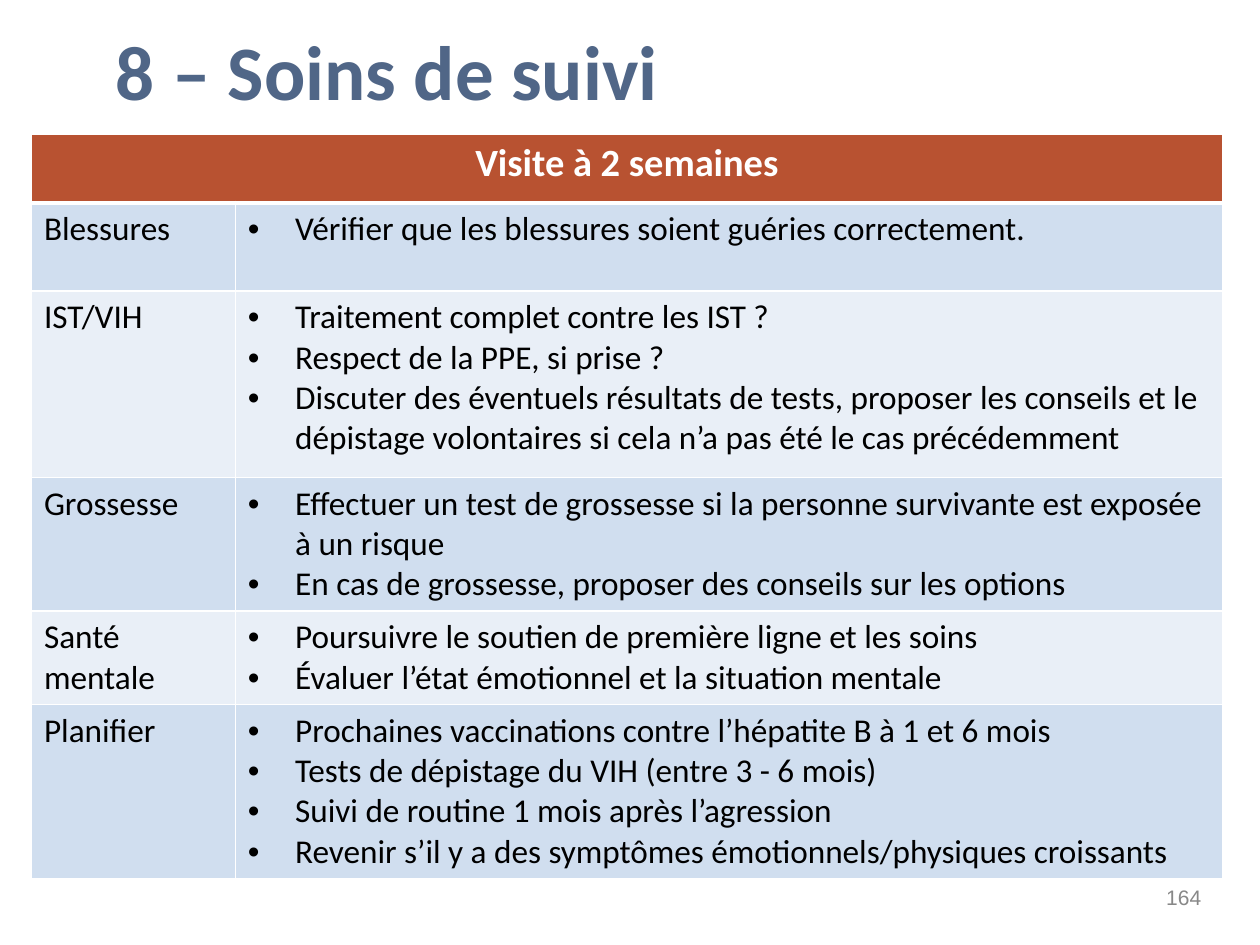
import pptx
import pptx.util
import pptx.dml.color
import pptx.enum.text
import pptx.oxml.ns
import lxml.etree

Pt = pptx.util.Pt
ALIGN = pptx.enum.text.PP_ALIGN
ANCHOR = pptx.enum.text.MSO_ANCHOR
WHITE, BLACK = "FFFFFF", "000000"
HEADER_FILL = "B85231"
BAND_FILLS = ["D0DEEF", "E9EFF7"]
COLUMN_WIDTHS = [116.5, 564]
ROW_HEIGHTS = [39.5, 50.3, 106.5, 75.7, 52.8, 98]
HEADING = "Visite à 2 semaines"
CARE_TOPICS = [
    ("Blessures", ["Vérifier que les blessures soient guéries correctement."]),
    ("IST/VIH", [
        "Traitement complet contre les IST ?",
        "Respect de la PPE, si prise ?",
        "Discuter des éventuels résultats de tests, proposer les conseils et le "
        "dépistage volontaires si cela n’a pas été le cas précédemment",
    ]),
    ("Grossesse", [
        "Effectuer un test de grossesse si la personne survivante est exposée à un risque",
        "En cas de grossesse, proposer des conseils sur les options",
    ]),
    ("Santé mentale", [
        "Poursuivre le soutien de première ligne et les soins",
        "Évaluer l’état émotionnel et la situation mentale",
    ]),
    ("Planifier", [
        "Prochaines vaccinations contre l’hépatite B à 1 et 6 mois",
        "Tests de dépistage du VIH (entre 3 - 6 mois)",
        "Suivi de routine 1 mois après l’agression",
        "Revenir s’il y a des symptômes émotionnels/physiques croissants",
    ]),
]


def rgb(color):
    """Return the colour for a hex string."""
    return pptx.dml.color.RGBColor.from_string(color)


def add_element(parent, tag, **attributes):
    """Append a DrawingML element and return it."""
    element = lxml.etree.SubElement(parent, pptx.oxml.ns.qn(tag))
    for key, value in attributes.items():
        element.set(key, str(value))
    return element


def add_bullet(paragraph, color=BLACK, indent=27):
    """Give a paragraph a round bullet and a hanging indent."""
    properties = paragraph._p.get_or_add_pPr()
    properties.set("marL", str(Pt(indent)))
    properties.set("indent", str(-Pt(indent)))
    add_element(add_element(properties, "a:buClr"), "a:srgbClr", val=color)
    add_element(properties, "a:buFont", typeface="Arial")
    add_element(properties, "a:buChar", char="•")


def write_text(frame, lines, size=19, font="Calibri", color=BLACK, bold=False,
               align=ALIGN.LEFT, bullets=False, spacing=None):
    """Fill a text frame with one formatted paragraph per line."""
    for index, line in enumerate(lines):
        paragraph = frame.add_paragraph() if index else frame.paragraphs[0]
        paragraph.alignment = align
        if spacing:
            paragraph.line_spacing = spacing
        if bullets:
            add_bullet(paragraph)
        run = paragraph.add_run()
        run.text = line
        run.font.size = Pt(size)
        run.font.name = font
        run.font.bold = bold
        run.font.color.rgb = rgb(color)


def style_cell(cell, fill, top=1, bottom=1):
    """Set the white borders and the fill of a cell."""
    properties = cell._tc.get_or_add_tcPr()
    widths = {"a:lnL": 1, "a:lnR": 1, "a:lnT": top, "a:lnB": bottom}
    for tag, width in widths.items():
        border = add_element(properties, tag, w=Pt(width))
        add_element(add_element(border, "a:solidFill"), "a:srgbClr", val=WHITE)
    cell.fill.solid()
    cell.fill.fore_color.rgb = rgb(fill)


def add_title(slide, text):
    """Place and format the slide title."""
    title = slide.shapes.title
    title.left, title.top, title.width, title.height = Pt(59), Pt(10), Pt(340), Pt(66)
    frame = title.text_frame
    frame.auto_size = pptx.enum.text.MSO_AUTO_SIZE.NONE
    frame.vertical_anchor = ANCHOR.MIDDLE
    write_text(frame, [text], size=44, color="506687", bold=True, spacing=0.9)


def add_care_table(slide):
    """Add the table of follow-up care by topic."""
    table = slide.shapes.add_table(
        len(ROW_HEIGHTS), len(COLUMN_WIDTHS), Pt(18), Pt(76.5),
        Pt(sum(COLUMN_WIDTHS)), Pt(sum(ROW_HEIGHTS))).table
    for column, width in zip(table.columns, COLUMN_WIDTHS):
        column.width = Pt(width)
    for row, height in zip(table.rows, ROW_HEIGHTS):
        row.height = Pt(height)
    heading, spanned = table.cell(0, 0), table.cell(0, 1)
    heading.merge(spanned)
    for cell in (heading, spanned):
        style_cell(cell, HEADER_FILL, bottom=3)
    write_text(heading.text_frame, [HEADING], size=22, color=WHITE, bold=True,
               align=ALIGN.CENTER)
    for index, (topic, actions) in enumerate(CARE_TOPICS):
        topic_cell, actions_cell = table.rows[index + 1].cells
        for cell in (topic_cell, actions_cell):
            style_cell(cell, BAND_FILLS[index % 2], top=1 if index else 3)
        write_text(topic_cell.text_frame, [topic])
        write_text(actions_cell.text_frame, actions, bullets=True)


def add_page_number(slide, number):
    """Add the page number at the lower right."""
    frame = slide.shapes.add_textbox(Pt(525.5), Pt(498), Pt(168), Pt(29)).text_frame
    frame.word_wrap = True
    frame.vertical_anchor = ANCHOR.MIDDLE
    write_text(frame, [number], size=12, font="Arial", color="888888", align=ALIGN.RIGHT)


def main():
    """Build and save the slide."""
    presentation = pptx.Presentation()
    presentation.slide_width, presentation.slide_height = Pt(720), Pt(540)
    slide = presentation.slides.add_slide(presentation.slide_layouts[5])
    add_care_table(slide)
    add_page_number(slide, "164")
    add_title(slide, "8 – Soins de suivi")
    presentation.save("out.pptx")


if __name__ == "__main__":
    main()
